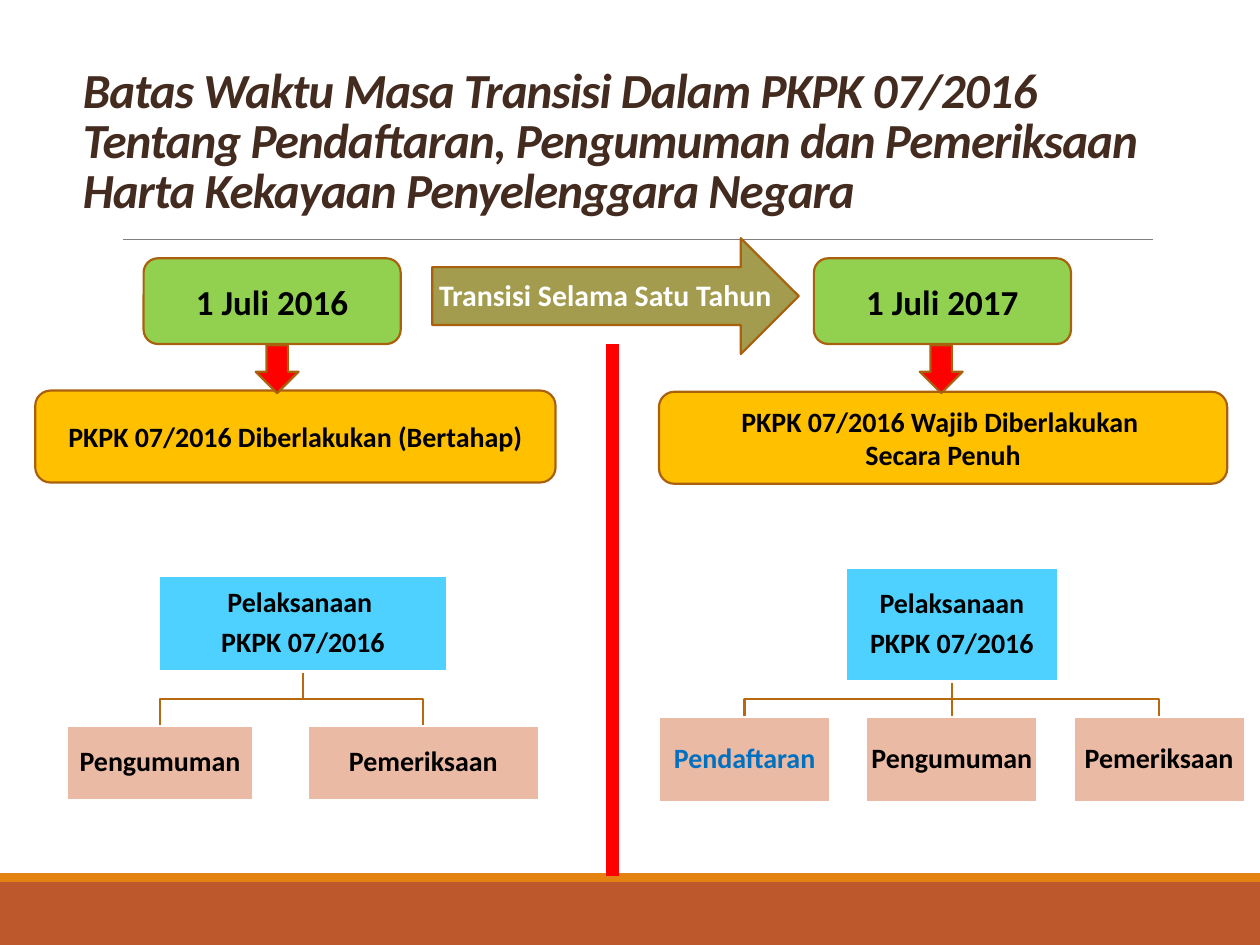
from lxml import etree
from pptx import Presentation
from pptx.dml.color import RGBColor
from pptx.enum.shapes import MSO_CONNECTOR, MSO_SHAPE
from pptx.enum.text import MSO_ANCHOR, PP_ALIGN
from pptx.oxml.ns import qn
from pptx.util import Inches, Pt

RECT, ROUND = MSO_SHAPE.RECTANGLE, MSO_SHAPE.ROUNDED_RECTANGLE
RIGHT, DOWN = MSO_SHAPE.RIGHT_ARROW, MSO_SHAPE.DOWN_ARROW
STRAIGHT = MSO_CONNECTOR.STRAIGHT
LEFT, CENTER = PP_ALIGN.LEFT, PP_ALIGN.CENTER
MIDDLE, BOTTOM = MSO_ANCHOR.MIDDLE, MSO_ANCHOR.BOTTOM

COLS, ROWS = 100, 75
EDGE, BRANCH = "A9610D", "B7690E"
RED, GREEN, AMBER = "FF0000", "92D050", "FFC000"
BLUE, PINK = "4FD1FF", "EABAA5"


def rgb(value):
    return RGBColor.from_string(value)


def write(s, text, size=16, color="000000", italic=False, align=CENTER,
          anchor=MIDDLE, spacing=None, after=0, tracking=0, inset=None):
    """Fill a shape with text: \\n starts a paragraph, \\v breaks a line."""
    tf = s.text_frame
    tf.word_wrap = True
    tf.vertical_anchor = anchor
    if inset is not None:
        tf.margin_left = tf.margin_right = Inches(inset)
        tf.margin_top = tf.margin_bottom = Inches(inset)
    for i, line in enumerate(text.split("\n")):
        p = tf.add_paragraph() if i else tf.paragraphs[0]
        p.text = line
        p.alignment = align
        p.space_after = Pt(after)
        if spacing:
            p.line_spacing = spacing
        for r in p.runs:
            r.font.name, r.font.size = "Calibri", Pt(size)
            r.font.bold, r.font.italic = True, italic
            r.font.color.rgb = rgb(color)
            if tracking:
                r.font._element.set("spc", str(int(tracking * 100)))


class Board:
    """Draws on one slide; every length is in grid columns and rows."""

    def __init__(self, prs):
        self.col, self.row = prs.slide_width / COLS, prs.slide_height / ROWS
        self.slide = prs.slides.add_slide(prs.slide_layouts[6])
        self.shapes = self.slide.shapes

    def place(self, *lengths):
        """Turn alternating columns and rows into slide units."""
        return [round(n * (self.row if i % 2 else self.col))
                for i, n in enumerate(lengths)]

    def shape(self, kind, box, fill, line=EDGE, text=None, **fmt):
        s = self.shapes.add_shape(kind, *self.place(*box))
        s.shadow.inherit = False
        s.fill.solid()
        s.fill.fore_color.rgb = rgb(fill)
        if line:
            s.line.color.rgb = rgb(line)
            s.line.width = Pt(1.25)
        else:
            s.line.fill.background()
        if text:
            write(s, text, **fmt)

    def text(self, box, text, **fmt):
        write(self.shapes.add_textbox(*self.place(*box)), text, **fmt)

    def line(self, ends, color, width):
        s = self.shapes.add_connector(STRAIGHT, *self.place(*ends))
        s.line.color.rgb = rgb(color)
        s.line.width = Pt(width)
        etree.SubElement(s._element.spPr, qn("a:effectLst"))

    def elbow(self, x1, y1, x2, y2):
        mid = (y1 + y2) / 2
        builder = self.shapes.build_freeform(*self.place(x1, y1))
        corners = [(x1, mid), (x2, mid), (x2, y2)]
        builder.add_line_segments([self.place(*c) for c in corners], close=False)
        s = builder.convert_to_shape()
        s.shadow.inherit = False
        s.fill.background()
        s.line.color.rgb = rgb(BRANCH)
        s.line.width = Pt(1.25)

    def tree(self, root, title, top, height, leaves):
        """Draw a root box over leaves given as (left, width, label, colour)."""
        x, y, w, h = root
        stem, base = x + w / 2, y + h
        for left, width, _, _ in leaves:
            tip = left + width / 2
            if abs(tip - stem) < 0.1:
                self.line((stem, base, stem, top), BRANCH, 1.25)
            else:
                self.elbow(stem, base, tip, top)
        fmt = dict(spacing=0.9, after=5.6, inset=0.01)
        self.shape(RECT, root, BLUE, "FFFFFF", title, **fmt)
        for left, width, label, color in leaves:
            self.shape(RECT, (left, top, width, height), PINK, "FFFFFF",
                       label, color=color, **fmt)


def main():
    prs = Presentation()
    prs.slide_width, prs.slide_height = Inches(10), Inches(7.5)
    b = Board(prs)

    b.shape(RECT, (0, 70, COLS, 5), "BD582C", None)
    b.shape(RECT, (0, 69.3, COLS, 0.7), "E48312", None)
    b.line((9.8, 19, 91.5, 19), "808080", 0.5)
    b.text((5.6, 4.4, 91.7, 13.4),
           "Batas Waktu Masa Transisi Dalam PKPK 07/2016 \v"
           "Tentang Pendaftaran, Pengumuman dan Pemeriksaan "
           "Harta Kekayaan Penyelenggara Negara",
           size=28, color="432B20", italic=True, align=LEFT, anchor=BOTTOM,
           spacing=0.85, tracking=-0.5)

    b.tree((12.6, 45.7, 22.9, 7.6), "Pelaksanaan \nPKPK 07/2016", 57.6, 5.9,
           [(5.3, 14.8, "Pengumuman", "000000"),
            (24.4, 18.4, "Pemeriksaan", "000000")])
    leaves = [("Pendaftaran", "0070C0"), ("Pengumuman", "000000"),
              ("Pemeriksaan", "000000")]
    b.tree((67.1, 45.1, 16.9, 9), "Pelaksanaan\nPKPK 07/2016", 56.9, 6.8,
           [(52.3 + 16.45 * i, 13.6, *leaf) for i, leaf in enumerate(leaves)])

    stages = [
        (11.4, "1 Juli 2016", 20.3, (2.8, 31, 41.3, 7.3),
         "PKPK 07/2016 Diberlakukan (Bertahap)"),
        (64.6, "1 Juli 2017", 73, (52.3, 31.1, 45.1, 7.3),
         "PKPK 07/2016 Wajib Diberlakukan \nSecara Penuh"),
    ]
    for date_x, date, arrow_x, rule_box, rule in stages:
        b.shape(ROUND, rule_box, AMBER, text=rule)
        b.shape(DOWN, (arrow_x, 27.4, 3.4, 3.8), RED)
        b.shape(ROUND, (date_x, 20.5, 20.4, 6.8), GREEN, text=date, size=20)

    b.shape(RIGHT, (34.3, 18.9, 29.1, 9.2), "A39B4E")
    b.text((33.5, 21, 29.1, 4.7), "Transisi Selama Satu Tahun",
           size=17, color="FFFFFF")
    b.line((48.6, 27.3, 48.6, 69.5), RED, 7.5)

    prs.save("out.pptx")


if __name__ == "__main__":
    main()
